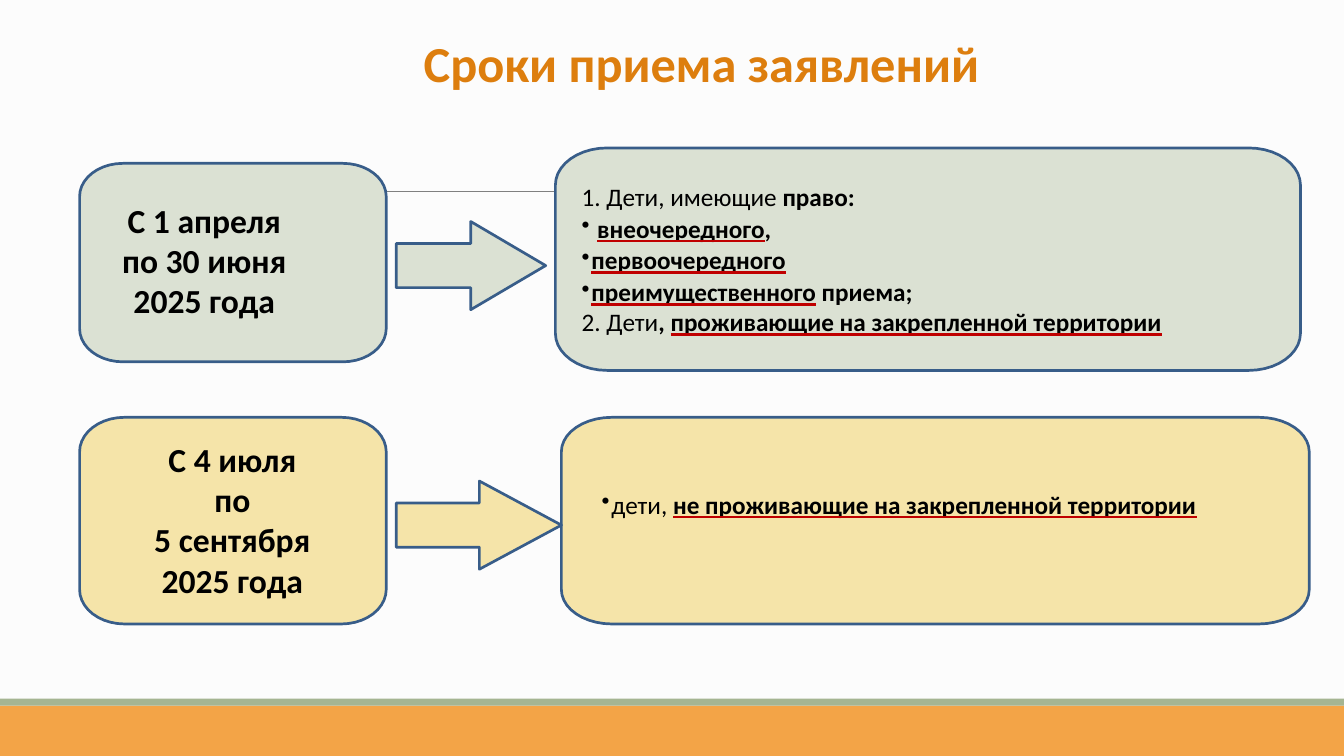
from dataclasses import dataclass
from math import cos, pi, sin

from lxml import etree
from pptx import Presentation
from pptx.dml.color import RGBColor
from pptx.enum.shapes import MSO_CONNECTOR, MSO_SHAPE
from pptx.enum.text import MSO_ANCHOR, MSO_AUTO_SIZE, PP_ALIGN
from pptx.oxml.ns import qn
from pptx.util import Pt

RECTANGLE = MSO_SHAPE.RECTANGLE
RIGHT_ARROW = MSO_SHAPE.RIGHT_ARROW
STRAIGHT = MSO_CONNECTOR.STRAIGHT
TOP, BOTTOM = MSO_ANCHOR.TOP, MSO_ANCHOR.BOTTOM
NO_AUTOFIT = MSO_AUTO_SIZE.NONE
LEFT, CENTER = PP_ALIGN.LEFT, PP_ALIGN.CENTER

TITLE_ONLY = 5
PLAIN, BOLD, UNDERLINED = range(3)
SLIDE_WIDTH, SLIDE_HEIGHT = 960, 540
CORNER_STEPS = 10


@dataclass(frozen=True)
class Theme:
    font: str = "Calibri"
    title_size: float = 36
    period_size: float = 24
    detail_size: float = 18
    outline_width: float = 1.92
    background: str = "FCFCFC"
    title: str = "DD7E0E"
    text: str = "000000"
    underline: str = "C00000"
    outline: str = "385D89"
    rule: str = "808080"
    footer: str = "F3A447"
    footer_edge: str = "A5B592"
    early: str = "DBE1D3"
    late: str = "F5E4A9"


THEME = Theme()


def rgb(value):
    return RGBColor.from_string(value)


def paint(shape, fill, outline=None):
    shape.shadow.inherit = False
    shape.fill.solid()
    shape.fill.fore_color.rgb = rgb(fill)
    if outline:
        shape.line.color.rgb = rgb(outline)
        shape.line.width = Pt(THEME.outline_width)
    else:
        shape.line.fill.background()


def add_band(slide, top, height, fill):
    band = slide.shapes.add_shape(RECTANGLE, 0, Pt(top), Pt(SLIDE_WIDTH), Pt(height))
    paint(band, fill)


def add_rule(slide, left, right, y):
    rule = slide.shapes.add_connector(STRAIGHT, Pt(left), Pt(y), Pt(right), Pt(y))
    rule.line.color.rgb = rgb(THEME.rule)
    rule.line.width = Pt(0.5)
    etree.SubElement(rule._element.spPr, qn("a:effectLst"))


def add_panel(slide, left, top, width, height, corner_width, fill):
    """Draw a box whose corners are quarter ellipses, a sixth of its height tall."""
    corner_height = height / 6
    near_x, far_x = left + corner_width, left + width - corner_width
    near_y, far_y = top + corner_height, top + height - corner_height
    centers = [(far_x, far_y), (near_x, far_y), (near_x, near_y), (far_x, near_y)]
    outline = []
    for quarter, (x, y) in enumerate(centers):
        for step in range(CORNER_STEPS + 1):
            angle = (quarter + step / CORNER_STEPS) * pi / 2
            outline.append((Pt(x + corner_width * cos(angle)),
                            Pt(y + corner_height * sin(angle))))
    builder = slide.shapes.build_freeform(*outline[0])
    builder.add_line_segments(outline[1:], close=True)
    paint(builder.convert_to_shape(), fill, THEME.outline)


def add_arrow(slide, left, top, width, head_ratio, fill):
    arrow = slide.shapes.add_shape(RIGHT_ARROW, Pt(left), Pt(top), Pt(width), Pt(63))
    arrow.adjustments[0] = 0.5
    arrow.adjustments[1] = head_ratio
    paint(arrow, fill, THEME.outline)


def format_font(run, size, color, bold=True):
    run.font.name = THEME.font
    run.font.size = Pt(size)
    run.font.bold = bold
    run.font.color.rgb = rgb(color)


def color_underline(run):
    run.font.underline = True
    underline_fill = etree.Element(qn("a:uFill"))
    solid = etree.SubElement(underline_fill, qn("a:solidFill"))
    etree.SubElement(solid, qn("a:srgbClr"), val=THEME.underline)
    run._r.rPr.find(qn("a:latin")).addprevious(underline_fill)


def add_bullet(paragraph):
    properties = paragraph._p.get_or_add_pPr()
    properties.set("marL", str(Pt(7)))
    properties.set("indent", str(-Pt(7)))
    etree.SubElement(properties, qn("a:buSzPct"), val="94000")
    etree.SubElement(properties, qn("a:buChar"), char="•")


def set_frame(frame, anchor, top=0, right=0):
    frame.word_wrap = True
    frame.auto_size = NO_AUTOFIT
    frame.vertical_anchor = anchor
    frame.margin_left = frame.margin_bottom = 0
    frame.margin_top, frame.margin_right = Pt(top), Pt(right)


def add_text(slide, left, top, width, height, lines, size, align, right=0):
    """Write lines given as (bulleted, [(words, emphasis), ...])."""
    frame = slide.shapes.add_textbox(Pt(left), Pt(top), Pt(width), Pt(height)).text_frame
    set_frame(frame, TOP, top=0.8, right=right)
    for index, (bulleted, pieces) in enumerate(lines):
        paragraph = frame.add_paragraph() if index else frame.paragraphs[0]
        paragraph.alignment = align
        paragraph.space_before = Pt(1 if bulleted or not index else 0)
        if bulleted:
            add_bullet(paragraph)
        for words, emphasis in pieces:
            run = paragraph.add_run()
            run.text = words
            format_font(run, size, THEME.text, emphasis != PLAIN)
            if emphasis == UNDERLINED:
                color_underline(run)


def add_period(slide, left, top, width, height, lines, right=0):
    add_text(slide, left, top, width, height, [(False, [(line, BOLD)]) for line in lines],
             THEME.period_size, CENTER, right)


def add_details(slide, left, top, width, height, lines):
    add_text(slide, left, top, width, height, lines, THEME.detail_size, LEFT)


def set_title(slide, text):
    title = slide.shapes.title
    title.left, title.top, title.width, title.height = Pt(136.8), Pt(11.5), Pt(668.2), Pt(54.7)
    frame = title.text_frame
    frame.text = text
    set_frame(frame, BOTTOM, top=10.8)
    paragraph = frame.paragraphs[0]
    paragraph.alignment = CENTER
    paragraph._p.get_or_add_pPr().set("marL", str(Pt(60.5)))
    format_font(paragraph.runs[0], THEME.title_size, THEME.title)


def main():
    presentation = Presentation()
    presentation.slide_width, presentation.slide_height = Pt(SLIDE_WIDTH), Pt(SLIDE_HEIGHT)
    slide = presentation.slides.add_slide(presentation.slide_layouts[TITLE_ONLY])
    slide.background.fill.solid()
    slide.background.fill.fore_color.rgb = rgb(THEME.background)

    add_band(slide, 504, 36, THEME.footer)
    add_band(slide, 499, 5, THEME.footer_edge)
    add_rule(slide, 94.3, 879, 136.8)
    set_title(slide, "Сроки приема заявлений")

    add_panel(slide, 56.9, 116.7, 219, 141.8, 31, THEME.early)
    add_period(slide, 86.4, 141.8, 159, 88.6,
               ["C 1 апреля", "по 30 июня", "2025 года"], right=40)
    add_panel(slide, 56.9, 298.1, 219, 147.6, 32, THEME.late)
    add_period(slide, 90, 312.5, 152, 117.4,
               ["С 4 июля", "по", "5 сентября", "2025 года"])

    add_panel(slide, 396.7, 105.7, 532.2, 158.9, 37, THEME.early)
    add_details(slide, 415.5, 128.9, 497.5, 113, [
        (False, [("1. Дети, имеющие ", PLAIN), ("право:", BOLD)]),
        (True, [(" ", BOLD), ("внеочередного", UNDERLINED), (",", BOLD)]),
        (True, [("первоочередного", UNDERLINED), (" ", BOLD)]),
        (True, [("преимущественного", UNDERLINED), (" приема;", BOLD)]),
        (False, [("2. Дети", PLAIN), (", ", BOLD),
                 ("проживающие на закрепленной территории", UNDERLINED)]),
    ])
    add_panel(slide, 401, 298.1, 534.2, 147.6, 36, THEME.late)
    add_details(slide, 429.8, 348.5, 499.7, 23, [
        (True, [("дети, ", PLAIN),
                ("не проживающие на закрепленной территории", UNDERLINED)]),
    ])

    add_arrow(slide, 283, 158.2, 106.8, 0.85, THEME.early)
    add_arrow(slide, 283, 343.6, 118, 0.93, THEME.late)
    presentation.save("out.pptx")


if __name__ == "__main__":
    main()
